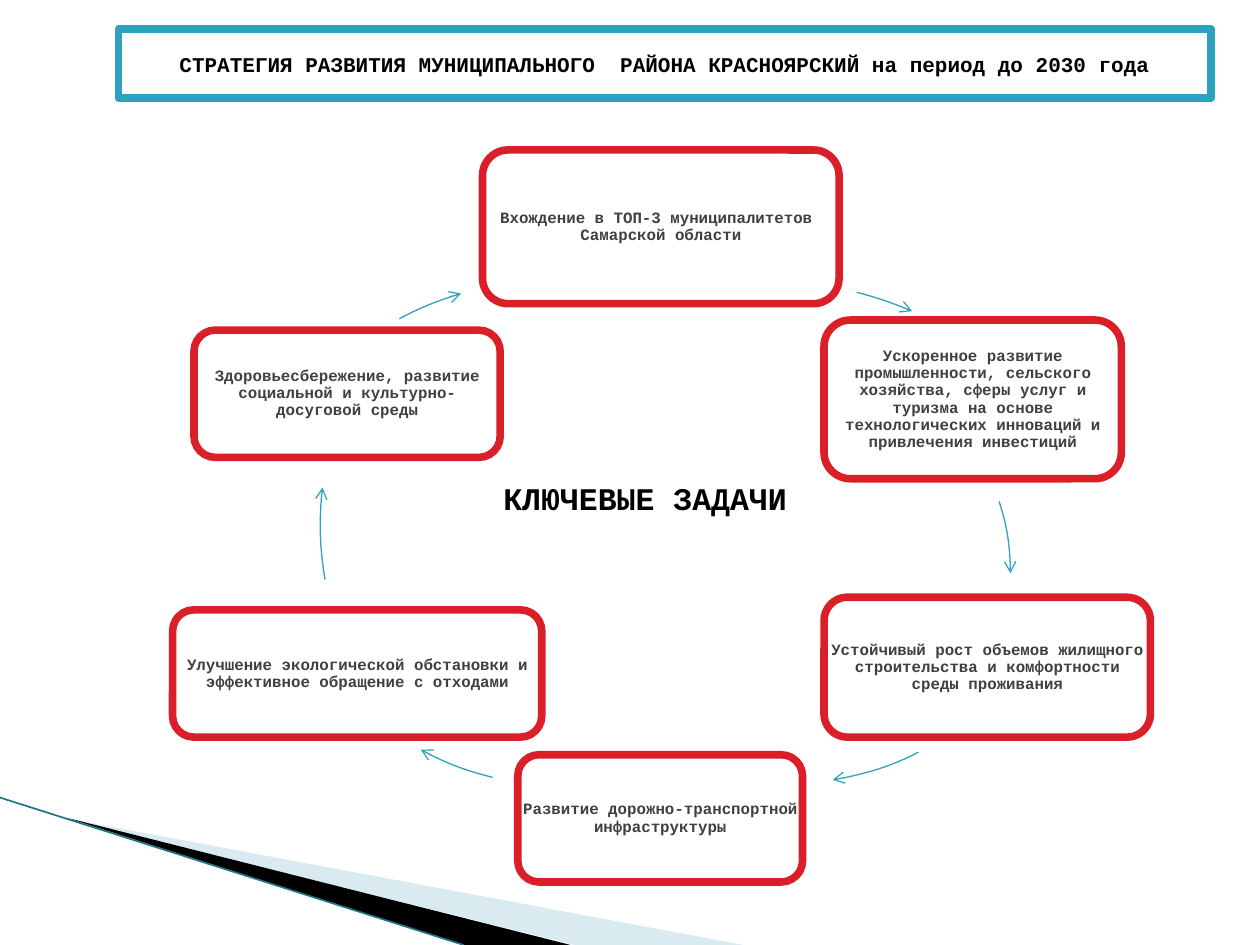
from lxml import etree
from pptx import Presentation
from pptx.dml.color import RGBColor
from pptx.enum.shapes import MSO_CONNECTOR, MSO_SHAPE
from pptx.enum.text import MSO_ANCHOR, PP_ALIGN
from pptx.oxml.ns import qn
from pptx.util import Inches, Pt

COLORS = {
    "white": "FFFFFF",
    "black": "000000",
    "teal": "2DA2BF",
    "dark_teal": "1F7488",
    "pale_teal": "A0CBDC",
    "red": "DA1F28",
    "gray": "404040",
}
FONT = "Courier New"
FRAME_WIDTH = 4.33
CYCLE_SIZE = 4.77

# Clockwise from the top: text and left, top, width, height
TASKS = [
    ("Вхождение в ТОП-3 муниципалитетов  Самарской области",
     (3.83, 1.19, 2.83, 1.22)),
    ("Ускоренное развитие промышленности, сельского хозяйства, сферы услуг и "
     "туризма на основе технологических инноваций и привлечения инвестиций",
     (6.54, 2.54, 2.36, 1.26)),
    ("Устойчивый рост объемов жилищного строительства и комфортности среды "
     "проживания",
     (6.54, 4.74, 2.59, 1.11)),
    ("Развитие дорожно-транспортной инфраструктуры",
     (4.11, 5.99, 2.26, 1.01)),
    ("Улучшение экологической обстановки и эффективное обращение с отходами",
     (1.37, 4.84, 2.93, 1.01)),
    ("Здоровьесбережение, развитие социальной и культурно-досуговой среды",
     (1.54, 2.62, 2.43, 1.01)),
]

# Corner of the circle's square, then start, two control points and end
ARCS = [
    ((3.86, 2.25), [(6.8, 2.32), (6.95, 2.36), (7.1, 2.41), (7.24, 2.47)]),
    ((3.26, 2.24), [(7.93, 3.98), (7.99, 4.16), (8.02, 4.36), (8.02, 4.55)]),
    ((3.85, 1.45), [(7.29, 5.97), (7.08, 6.08), (6.84, 6.15), (6.61, 6.19)]),
    ((2.1, 1.48), [(3.91, 6.17), (3.71, 6.12), (3.52, 6.05), (3.34, 5.95)]),
    ((2.54, 1.8), [(2.58, 4.6), (2.54, 4.36), (2.53, 4.11), (2.56, 3.87)]),
    ((1.94, 2.24), [(3.17, 2.53), (3.32, 2.45), (3.49, 2.38), (3.66, 2.33)]),
]


def rgb(name):
    return RGBColor.from_string(COLORS[name])


def write(frame, text, size, color="black", inset=None, line_spacing=None,
          anchor=MSO_ANCHOR.MIDDLE):
    """Fill a text frame with one bold centred paragraph."""
    frame.word_wrap = True
    frame.vertical_anchor = anchor
    if inset is not None:
        frame.margin_left = frame.margin_right = Inches(inset)
        frame.margin_top = frame.margin_bottom = Inches(inset)
    paragraph = frame.paragraphs[0]
    paragraph.alignment = PP_ALIGN.CENTER
    if line_spacing:
        paragraph.line_spacing = line_spacing
    run = paragraph.add_run()
    run.text = text
    run.font.name = FONT
    run.font.size = Pt(size)
    run.font.bold = True
    run.font.color.rgb = rgb(color)


def set_bounds(shape, box):
    """Give a freeform a new box while its outline stays where it is."""
    left, top, width, height = map(Inches, box)
    shift_x, shift_y = shape.left - left, shape.top - top
    for point in shape._element.iter(qn("a:pt")):
        point.set("x", str(int(point.get("x")) + shift_x))
        point.set("y", str(int(point.get("y")) + shift_y))
    outline = next(shape._element.iter(qn("a:path")))
    outline.set("w", str(width))
    outline.set("h", str(height))
    shape.left, shape.top, shape.width, shape.height = left, top, width, height


class StrategySlide:
    def __init__(self, presentation):
        self.shapes = presentation.slides.add_slide(
            presentation.slide_layouts[6]).shapes

    def frame(self, box, color, preset=MSO_SHAPE.RECTANGLE):
        shape = self.shapes.add_shape(preset, *map(Inches, box))
        shape.shadow.inherit = False
        shape.fill.solid()
        shape.fill.fore_color.rgb = rgb("white")
        shape.line.color.rgb = rgb(color)
        shape.line.width = Pt(FRAME_WIDTH)
        return shape

    def label(self, box, text, size, **style):
        textbox = self.shapes.add_textbox(*map(Inches, box))
        write(textbox.text_frame, text, size, **style)

    def task(self, text, box):
        self.frame(box, "red", MSO_SHAPE.ROUNDED_RECTANGLE)
        self.label(box, text, 9, color="gray", inset=0.04, line_spacing=0.9)

    def outline(self, points, close):
        start, *rest = [(Inches(x), Inches(y)) for x, y in points]
        builder = self.shapes.build_freeform(*start)
        builder.add_line_segments(rest, close=close)
        shape = builder.convert_to_shape()
        shape.shadow.inherit = False
        return shape

    def wedge(self, points, color, opacity=None, bounds=None):
        shape = self.outline(points, close=True)
        shape.line.fill.background()
        shape.fill.solid()
        shape.fill.fore_color.rgb = rgb(color)
        if opacity is not None:
            tint = shape.fill._xPr.find(qn("a:solidFill"))[0]
            etree.SubElement(tint, qn("a:alpha"), val=str(opacity * 1000))
        if bounds:
            set_bounds(shape, bounds)

    def arc_arrow(self, corner, points):
        """Turn the three segments of an open outline into one Bezier curve."""
        shape = self.outline(points, close=False)
        shape.fill.background()
        shape.line.color.rgb = rgb("teal")
        shape.line.width = Pt(0.75)
        etree.SubElement(shape.line._get_or_add_ln(), qn("a:tailEnd"),
                         type="arrow")
        segments = list(shape._element.iter(qn("a:lnTo")))
        curve = etree.SubElement(segments[0].getparent(), qn("a:cubicBezTo"))
        for segment in segments:
            curve.append(segment[0])
            segment.getparent().remove(segment)
        set_bounds(shape, (*corner, CYCLE_SIZE, CYCLE_SIZE))

    def line(self, start, end, color, width):
        connector = self.shapes.add_connector(
            MSO_CONNECTOR.STRAIGHT, *map(Inches, start + end))
        connector.line.color.rgb = rgb(color)
        connector.line.width = Pt(width)
        etree.SubElement(connector._element.spPr, qn("a:effectLst"))


def main():
    presentation = Presentation()
    presentation.slide_width = Inches(10)
    presentation.slide_height = Inches(7.5)
    slide = StrategySlide(presentation)

    slide.wedge([(0.55, 6.5), (5.9, 7.5), (4.56, 7.5)], "pale_teal",
                opacity=40, bounds=(0.78, 5.47, 4.16, 1.58))
    slide.wedge([(0.53, 6.49), (4.53, 7.5), (3.68, 7.5)], "black")
    slide.line((0, 6.33), (3.68, 7.5), "dark_teal", 0.95)

    title = slide.frame((0.94, 0.23, 8.67, 0.55), "teal")
    write(title.text_frame,
          "СТРАТЕГИЯ РАЗВИТИЯ МУНИЦИПАЛЬНОГО  РАЙОНА КРАСНОЯРСКИЙ "
          "на период до 2030 года", 12)

    for (text, box), (corner, points) in zip(TASKS, ARCS):
        slide.task(text, box)
        slide.arc_arrow(corner, points)
    slide.label((3.52, 3.75, 3.2, 0.4), "КЛЮЧЕВЫЕ ЗАДАЧИ", 18,
                anchor=MSO_ANCHOR.TOP)

    presentation.save("out.pptx")


if __name__ == "__main__":
    main()
